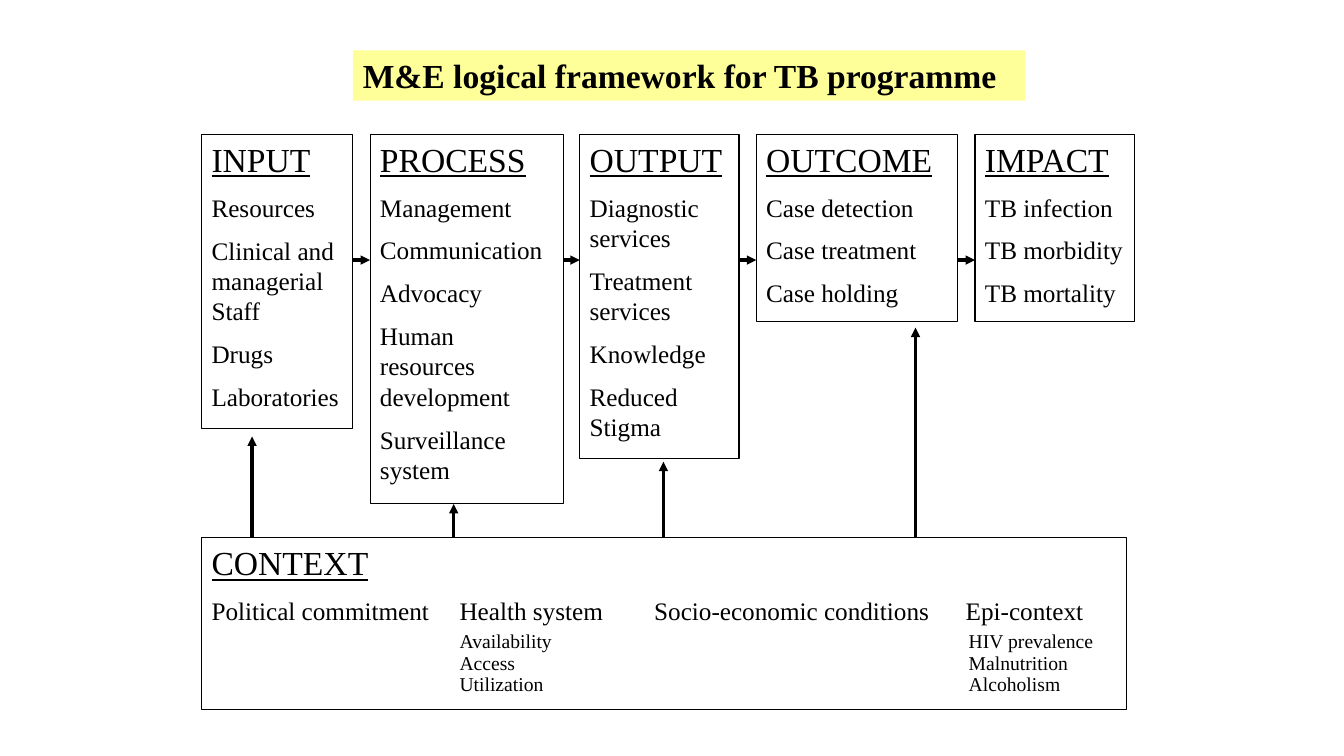
from lxml import etree
from pptx import Presentation
from pptx.dml.color import RGBColor
from pptx.enum.shapes import MSO_CONNECTOR, MSO_SHAPE
from pptx.enum.text import MSO_ANCHOR, PP_ALIGN
from pptx.oxml.ns import qn
from pptx.util import Inches, Pt

RECT, LINE = MSO_SHAPE.RECTANGLE, MSO_CONNECTOR.STRAIGHT
TOP, LEFT = MSO_ANCHOR.TOP, PP_ALIGN.LEFT
FONT, BLACK, YELLOW = "Times New Roman", "000000", "FFFF99"

# Content
TITLE = "M&E logical framework for TB programme"
STAGES = [  # heading, left, width, height, items
    ("INPUT", 2, 1.5, 2.92,
     ["Resources", "Clinical and managerial Staff", "Drugs", "Laboratories"]),
    ("PROCESS", 3.67, 1.92, 3.67,
     ["Management", "Communication", "Advocacy",
      "Human resources development", "Surveillance system"]),
    ("OUTPUT", 5.75, 1.58, 3.22,
     ["Diagnostic services", "Treatment services", "Knowledge",
      "Reduced Stigma"]),
    ("OUTCOME", 7.5, 2, 1.86,
     ["Case detection", "Case treatment", "Case holding"]),
    ("IMPACT", 9.67, 1.58, 1.86,
     ["TB infection", "TB morbidity", "TB mortality"]),
]
THEMES = ["Political commitment", "Health system",
          "Socio-economic conditions", "Epi-context"]
DETAILS = [("Availability", "HIV prevalence"), ("Access", "Malnutrition"),
           ("Utilization", "Alcoholism")]
RISERS = [(2.5, 4.33), (4.5, 5), (6.58, 4.58), (9.08, 3.25)]  # x, tip

# Layout
STAGE_TOP, FLOW_Y, BASE_TOP = 1.33, 2.58, 5.33
THEME_TABS, DETAIL_TABS = (2.46, 4.39, 7.48), (2.46, 7.51)

deck = Presentation()
deck.slide_width, deck.slide_height = Inches(13.33), Inches(7.5)
slide = deck.slides.add_slide(deck.slide_layouts[6])


def color(code):
    return RGBColor.from_string(code)


def add_box(left, top, width, height, fill=None):
    box = slide.shapes.add_shape(
        RECT, Inches(left), Inches(top), Inches(width), Inches(height))
    box.shadow.inherit = False
    if fill:
        box.fill.solid()
        box.fill.fore_color.rgb = color(fill)
        box.line.fill.background()
    else:
        box.fill.background()
        box.line.color.rgb = color(BLACK)
        box.line.width = Pt(0.75)
    frame = box.text_frame
    frame.word_wrap = True
    frame.vertical_anchor = TOP
    return frame


def add_text(para, text, size, gap=0, bold=False, under=False):
    para.alignment = LEFT
    para.space_before = Pt(gap)
    run = para.add_run()
    run.text = text
    font = run.font
    font.name, font.size = FONT, Pt(size)
    font.bold, font.underline = bold, under
    font.color.rgb = color(BLACK)


def add_head(frame, text):
    add_text(frame.paragraphs[0], text, 24, under=True)


def add_tabs(para, stops):
    tabs = etree.SubElement(para._p.get_or_add_pPr(), qn("a:tabLst"))
    for stop in stops:
        etree.SubElement(tabs, qn("a:tab"), pos=str(Inches(stop)), algn="l")


def add_arrow(x1, y1, x2, y2):
    arrow = slide.shapes.add_connector(
        LINE, Inches(x1), Inches(y1), Inches(x2), Inches(y2))
    arrow.line.color.rgb = color(BLACK)
    arrow.line.width = Pt(2.25)
    etree.SubElement(arrow.line._get_or_add_ln(), qn("a:tailEnd"),
                     type="triangle")
    etree.SubElement(arrow._element.spPr, qn("a:effectLst"))


# Stage boxes
for head, left, width, height, items in STAGES:
    frame = add_box(left, STAGE_TOP, width, height)
    add_head(frame, head)
    for item in items:
        add_text(frame.add_paragraph(), item, 18, gap=9)

# Context box, columns set by tab stops
frame = add_box(2, BASE_TOP, 9.17, 1.71)
add_head(frame, "CONTEXT")
para = frame.add_paragraph()
add_text(para, "\t".join(THEMES), 18, gap=9)
add_tabs(para, THEME_TABS)
for row, pair in enumerate(DETAILS):
    para = frame.add_paragraph()
    add_text(para, "\t" + "\t".join(pair), 14, gap=7 if row else 10)
    para.line_spacing = 0.5
    add_tabs(para, DETAIL_TABS)

# Title
frame = add_box(3.5, 0.5, 6.67, 0.5, YELLOW)
add_text(frame.paragraphs[0], TITLE, 24, bold=True)

# Arrows between stages, then up from the context
for stage, after in zip(STAGES, STAGES[1:]):
    add_arrow(stage[1] + stage[2], FLOW_Y, after[1], FLOW_Y)
for x, tip in RISERS:
    add_arrow(x, BASE_TOP, x, tip)

deck.save("out.pptx")
